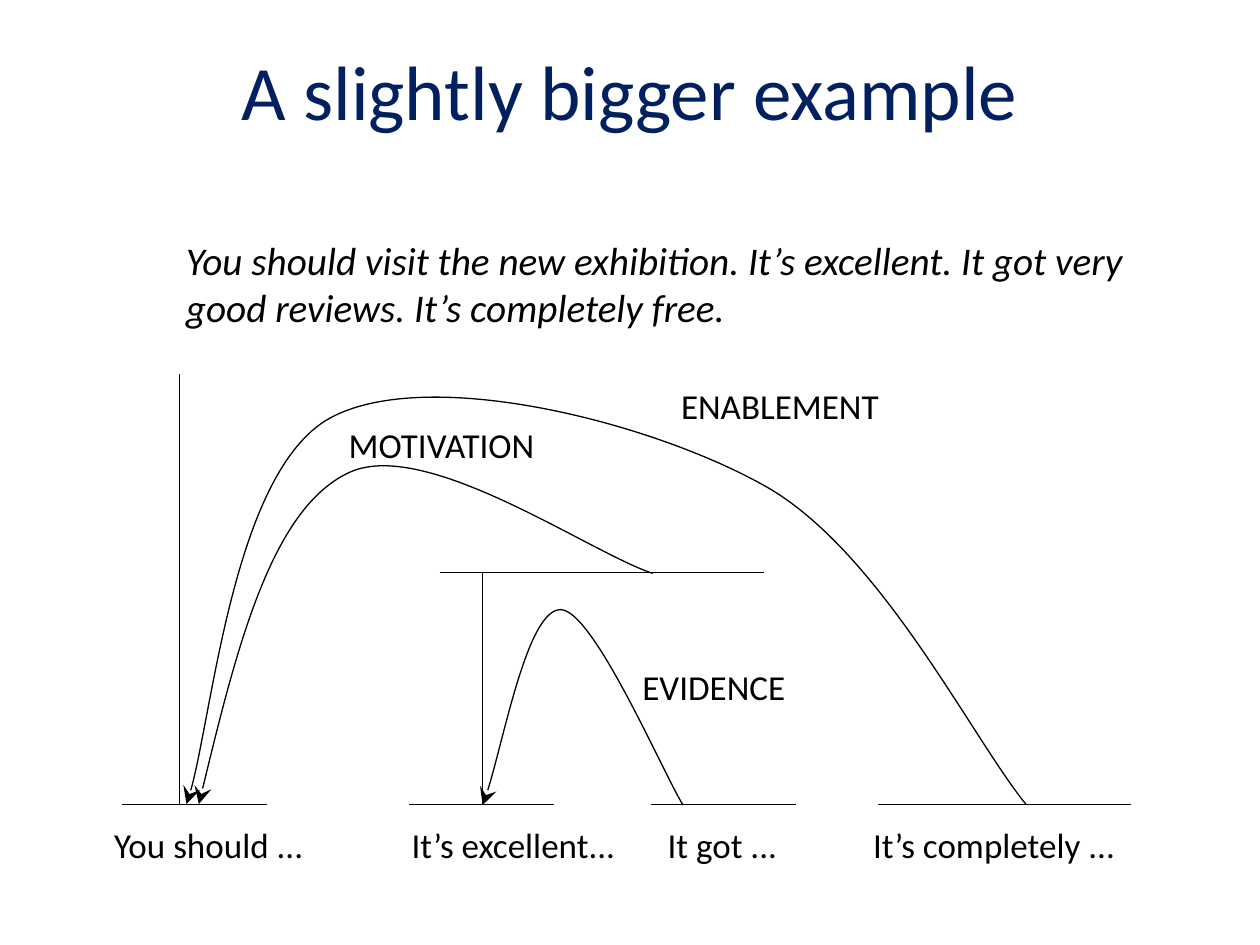
"""Build a slide that diagrams how the parts of a short argument relate."""
from lxml import etree
from pptx import Presentation, util as u
from pptx.dml.color import RGBColor
from pptx.enum import shapes, text
from pptx.oxml.ns import qn

HUES = {"title": "002060", "ink": "000000"}
FONT = {"name": "Calibri", "size": u.Pt(20), "italic": False}
FRAME = {"word_wrap": False, "vertical_anchor": text.MSO_ANCHOR.MIDDLE,
         "auto_size": text.MSO_AUTO_SIZE.SHAPE_TO_FIT_TEXT}
FIXED = {"word_wrap": True, "auto_size": text.MSO_AUTO_SIZE.NONE}
HEAD = {"type": "stealth", "w": "lg", "len": "lg"}

BASE = 16.22
BAR = 11.54
LABELS = [
    ("You should ...", 2.05, 16.48, 4.45),
    ("It’s excellent...", 8.05, 16.48, 5.84),
    ("It got ...", 13.21, 16.48, 3.53),
    ("It’s completely ...", 17.35, 16.48, 6.78),
    ("MOTIVATION", 6.78, 8.41, 5.23),
    ("EVIDENCE", 12.7, 13.28, 4.17),
    ("ENABLEMENT", 13.48, 7.63, 5.46),
]
SPANS = [(2.46, 5.38), (8.25, 11.17), (13.13, 16.05), (17.7, 22.8)]
STEMS = [(8.86, BAR, 15.41, BAR), (3.62, BASE, 3.62, 7.54),
         (9.72, BASE, 9.72, BAR)]
ARCS = [
    [(13.77, 16.23), (13.36, 15.57), (11.96, 12.29), (11.3, 12.29),
     (10.64, 12.29), (10.06, 15.42), (9.73, 16.23)],
    [(13.16, 11.56), (11.86, 11.13), (8.51, 8.76), (6.99, 9.55),
     (5.46, 10.31), (4.72, 13.26), (4.01, 16.21)],
    [(20.68, 16.21), (19.58, 14.86), (17.73, 11.07), (15.39, 9.78),
     (13.06, 8.48), (8.59, 7.37), (6.65, 8.43),
     (4.72, 9.5), (4.24, 14.91), (3.76, 16.21)],
]


def apply(obj, vals):
    """Set each attribute of an object from a dict."""
    for key, val in vals.items():
        setattr(obj, key, val)


def add_text(slide, words, box, hue="ink", frame=None, font=None, align="LEFT"):
    """Add one paragraph of text in a box given in centimetres."""
    body = slide.shapes.add_textbox(*map(u.Cm, box)).text_frame
    apply(body, {**FRAME, **(frame or {})})
    para = body.paragraphs[0]
    para.alignment = getattr(text.PP_ALIGN, align)
    run = para.add_run()
    run.text = words
    apply(run.font, {**FONT, **(font or {})})
    run.font.color.rgb = RGBColor.from_string(HUES[hue])


def set_line(line):
    """Give a line its colour and width."""
    line.color.rgb = RGBColor.from_string(HUES["ink"])
    line.width = u.Pt(0.75)


def add_rule(slide, ends):
    """Add a straight line between two points."""
    rule = slide.shapes.add_connector(shapes.MSO_CONNECTOR.STRAIGHT, *map(u.Cm, ends))
    set_line(rule.line)
    etree.SubElement(rule._element.spPr, qn("a:effectLst"))


def add_arc(slide, knots):
    """Add a Bezier curve with an arrowhead at its last point."""
    start, *rest = [(u.Cm(x), u.Cm(y)) for x, y in knots]
    build = slide.shapes.build_freeform(*start)
    build.add_line_segments(rest, close=False)
    arc = build.convert_to_shape()
    arc.shadow.inherit = False
    arc.fill.background()
    set_line(arc.line)
    steps = list(arc._element.iter(qn("a:lnTo")))
    for i in range(0, len(steps), 3):
        curve = etree.SubElement(steps[i].getparent(), qn("a:cubicBezTo"))
        for step in steps[i:i + 3]:
            curve.append(step[0])
            step.getparent().remove(step)
    etree.SubElement(arc.line._get_or_add_ln(), qn("a:tailEnd"), HEAD)


def main():
    """Build and save the slide."""
    deck = Presentation()
    apply(deck, {"slide_width": u.Cm(25.4), "slide_height": u.Cm(19.05)})
    slide = deck.slides.add_slide(deck.slide_layouts[6])
    add_text(slide, "A slightly bigger example", (1.27, 0.22, 22.86, 3.18),
             "title", FIXED, {"size": u.Pt(44)}, "CENTER")
    add_text(slide, "You should visit the new exhibition. It’s excellent. "
             "It got very good reviews. It’s completely free.",
             (3.5, 4.63, 20.63, 2.15),
             frame={**FIXED, "vertical_anchor": text.MSO_ANCHOR.TOP},
             font={"size": u.Pt(22.4), "italic": True})
    for left, right in SPANS:
        add_rule(slide, (left, BASE, right, BASE))
    for ends in STEMS:
        add_rule(slide, ends)
    for knots in ARCS:
        add_arc(slide, knots)
    for words, left, top, width in LABELS:
        add_text(slide, words, (left, top, width, 1.1))
    deck.save("out.pptx")


if __name__ == "__main__":
    main()
